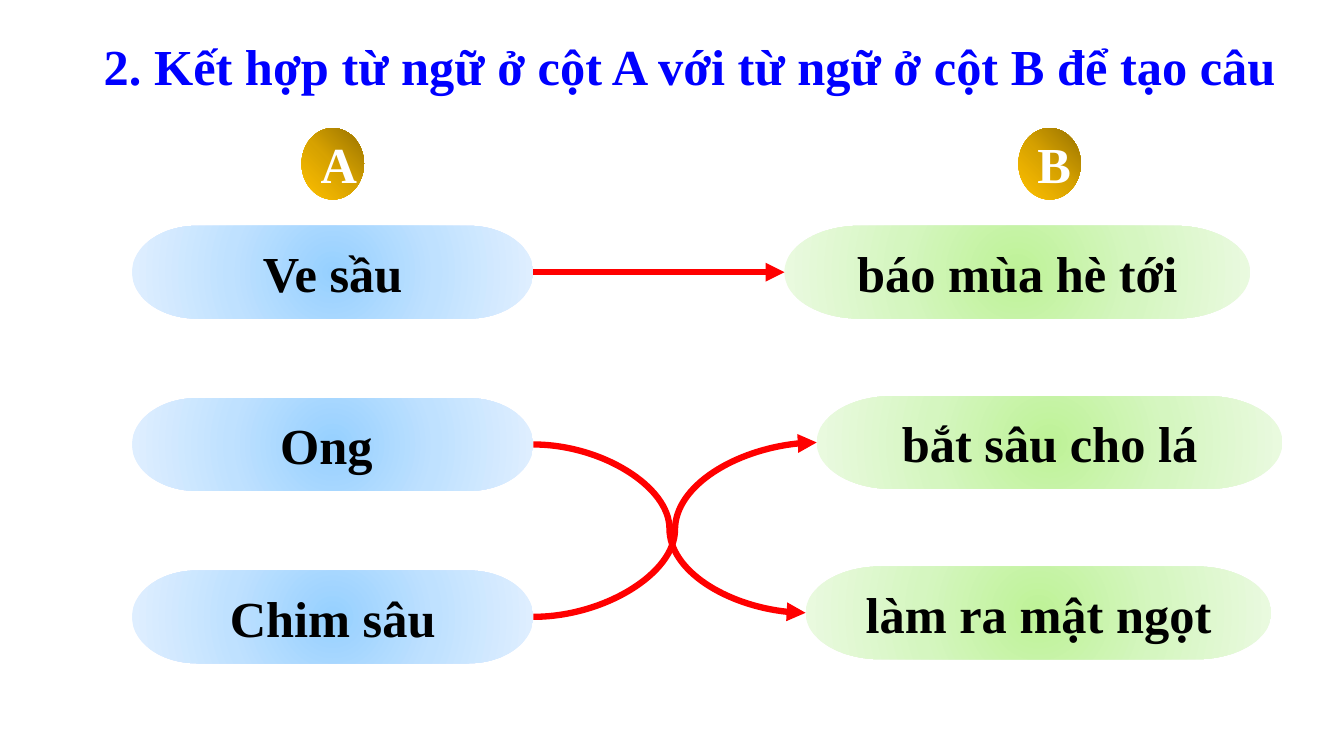
from pptx import Presentation
from pptx.dml.color import RGBColor
from pptx.enum.shapes import MSO_CONNECTOR as LINK, MSO_SHAPE as SHAPE
from pptx.enum.text import MSO_ANCHOR as ANCHOR, PP_ALIGN as ALIGN
from pptx.oxml import parse_xml
from pptx.oxml.ns import nsdecls
from pptx.util import Inches, Pt

COLORS = {"title": "0000FF", "word": "000000", "letter": "FFFFFF", "arrow": "FF0000"}
GRADIENTS = {
    "subject": ("96D0FF", "BFE1FF", "E0EFFF"),
    "predicate": ("BEF297", "D5F6C0", "EAFAE0"),
    "badge": ("977200", "D7A200", "FFC000"),
}
CENTER = (50, 50, 50, 50)
TOP_RIGHT = (100, 0, 0, 100)
LEFT_SIDE, RIGHT_SIDE = 1, 3

SUBJECTS = ["Ve sầu", "Ong ", "Chim sâu"]
PREDICATES = [("báo mùa hè tới", 7.78), ("bắt sâu cho lá", 8.1), ("làm ra mật ngọt", 7.99)]
MATCHES = [(0, 0), (1, 2), (2, 1)]
BADGES = [("A", 2.99), ("B", 10.1)]


def write_text(frame, text, color, align=ALIGN.CENTER, anchor=ANCHOR.MIDDLE, size=36):
    frame.word_wrap = True
    frame.vertical_anchor = anchor
    paragraph = frame.paragraphs[0]
    paragraph.alignment = align
    run = paragraph.add_run()
    run.text = text
    run.font.name = "Times New Roman"
    run.font.size = Pt(size)
    run.font.bold = True
    run.font.color.rgb = RGBColor.from_string(COLORS[color])


def fill_radial(shape, gradient, focus):
    """Fill with three stops spreading from focus (left, top, right, bottom percent)."""
    stops = "".join(
        f'<a:gs pos="{i * 50000}"><a:srgbClr val="{color}"/></a:gs>'
        for i, color in enumerate(GRADIENTS[gradient])
    )
    edges = " ".join(f'{side}="{value * 1000}"' for side, value in zip("ltrb", focus))
    shape.fill.solid()
    solid = shape.fill._xPr.solidFill
    solid.getparent().replace(solid, parse_xml(
        f'<a:gradFill {nsdecls("a")} rotWithShape="1"><a:gsLst>{stops}</a:gsLst>'
        f'<a:path path="circle"><a:fillToRect {edges}/></a:path></a:gradFill>'
    ))


def add_label(slide, kind, text, box, gradient, color="word", focus=CENTER):
    label = slide.shapes.add_shape(kind, *map(Inches, box))
    label.shadow.inherit = False
    label.line.fill.background()
    fill_radial(label, gradient, focus)
    write_text(label.text_frame, text, color)
    return label


def add_title(slide, text):
    title = slide.shapes.add_textbox(Inches(0.93), Inches(0.3), Inches(11.95), Inches(0.71))
    write_text(title.text_frame, text, "title", align=ALIGN.LEFT, anchor=ANCHOR.TOP)


def add_match(slide, subject, predicate):
    arrow = slide.shapes.add_connector(LINK.CURVE, 0, 0, 0, 0)
    arrow.begin_connect(subject, RIGHT_SIDE)
    arrow.end_connect(predicate, LEFT_SIDE)
    arrow.line.width = Pt(4.5)
    arrow.line.color.rgb = RGBColor.from_string(COLORS["arrow"])
    arrow.line._get_or_add_ln().append(parse_xml(f'<a:tailEnd {nsdecls("a")} type="triangle"/>'))
    arrow._element.spPr.append(parse_xml(f'<a:effectLst {nsdecls("a")}/>'))


def main():
    deck = Presentation()
    deck.slide_width, deck.slide_height = Inches(13.33), Inches(7.5)
    slide = deck.slides.add_slide(deck.slide_layouts[6])

    add_title(slide, "2. Kết hợp từ ngữ ở cột A với từ ngữ ở cột B để tạo câu")
    subjects = [
        add_label(slide, SHAPE.FLOWCHART_TERMINATOR, text,
                  (1.31, 2.24 + 1.71 * row, 3.98, 0.92), "subject")
        for row, text in enumerate(SUBJECTS)
    ]
    for letter, left in BADGES:
        add_label(slide, SHAPE.OVAL, letter, (left, 1.27, 0.62, 0.71), "badge",
                  color="letter", focus=TOP_RIGHT)
    predicates = [
        add_label(slide, SHAPE.FLOWCHART_TERMINATOR, text,
                  (left, 2.24 + 1.69 * row, 4.62, 0.92), "predicate")
        for row, (text, left) in enumerate(PREDICATES)
    ]
    for subject, predicate in MATCHES:
        add_match(slide, subjects[subject], predicates[predicate])

    deck.save("out.pptx")


if __name__ == "__main__":
    main()
